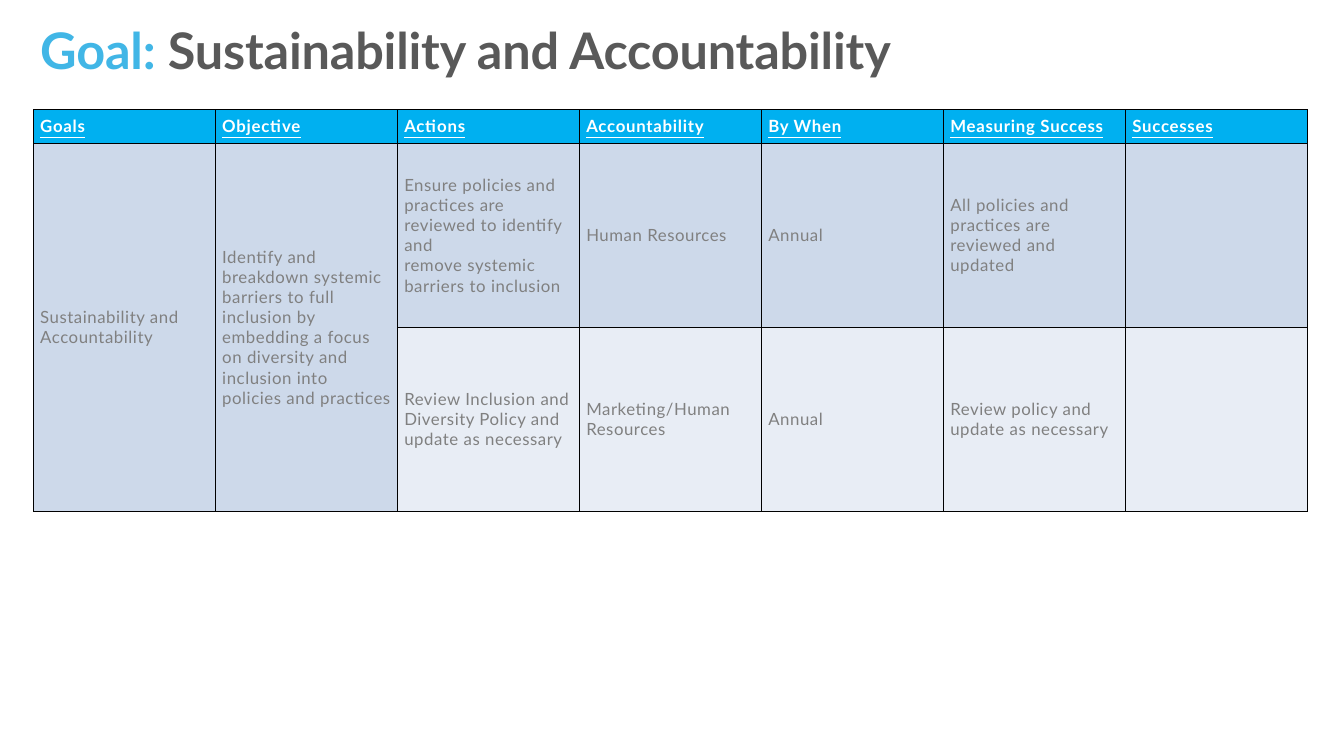
from pptx import Presentation
from pptx.dml.color import RGBColor
from pptx.enum.text import MSO_ANCHOR, MSO_AUTO_SIZE, PP_ALIGN
from pptx.oxml.ns import qn
from pptx.util import Cm, Pt
from lxml import etree

TOP, MIDDLE = MSO_ANCHOR.TOP, MSO_ANCHOR.MIDDLE
NO_AUTOFIT = MSO_AUTO_SIZE.NONE
LEFT = PP_ALIGN.LEFT
TITLE_ONLY = 5
FONT = "Lato"
COLORS = {
    "accent": "41B6E6", "title": "595959", "header": "00B0F0",
    "header_text": "FFFFFF", "body_text": "808080",
    "band_dark": "CDD9EA", "band_light": "E8EDF5", "border": "000000",
}
HEADERS = ["Goals", "Objective", "Actions", "Accountability", "By When",
           "Measuring Success", "Successes"]
ROWS = [
    ["Sustainability and Accountability",
     "Identify and breakdown systemic barriers to full inclusion by embedding "
     "a focus on diversity and inclusion into policies and practices",
     "Ensure policies and practices are reviewed to identify and\n"
     "remove systemic barriers to inclusion",
     "Human Resources", "Annual",
     "All policies and practices are reviewed and updated", ""],
    ["", "", "Review Inclusion and Diversity Policy and update as necessary",
     "Marketing/Human Resources", "Annual",
     "Review policy and update as necessary", ""],
]
MERGED_COLUMNS = 2
ROW_HEIGHTS = [1.27, 6.96, 6.96]
COLUMN_WIDTH = 6.88


def color(name):
    """Return the named palette colour."""
    return RGBColor.from_string(COLORS[name])


def format_run(r, size, color_name, spacing, bold=False, underline=False):
    """Apply font, colour and letter spacing in hundredths of a point."""
    r.font.name = FONT
    r.font.size = Pt(size)
    r.font.bold = bold
    r.font.underline = underline
    r.font.color.rgb = color(color_name)
    r._r.get_or_add_rPr().set("spc", str(spacing))


def set_borders(cell):
    """Draw a thin line on all four sides of a cell."""
    tcPr = cell._tc.get_or_add_tcPr()
    for side in ("lnL", "lnR", "lnT", "lnB"):
        ln = etree.SubElement(tcPr, qn("a:" + side), w=str(Pt(1)))
        fill = etree.SubElement(ln, qn("a:solidFill"))
        etree.SubElement(fill, qn("a:srgbClr"), val=COLORS["border"])


def fill_cell(cell, text, fill_name, **run_format):
    """Set the text, borders and fill of a table cell."""
    set_borders(cell)
    cell.fill.solid()
    cell.fill.fore_color.rgb = color(fill_name)
    cell.vertical_anchor = MIDDLE
    cell.margin_left = cell.margin_right = Cm(0.25)
    cell.margin_top = cell.margin_bottom = Cm(0.25)
    cell.text_frame.text = text
    for p in cell.text_frame.paragraphs:
        p.line_spacing = Pt(21.6)
        for r in p.runs:
            format_run(r, 18, **run_format)


def add_title(slide):
    """Place the two-coloured title."""
    sp = slide.shapes.title
    sp.left, sp.top, sp.width, sp.height = Cm(1.52), Cm(0.71), Cm(42.9), Cm(2.79)
    tf = sp.text_frame
    tf.auto_size = NO_AUTOFIT
    tf.word_wrap = True
    tf.vertical_anchor = TOP
    tf.margin_left = tf.margin_right = tf.margin_top = tf.margin_bottom = 0
    p = tf.paragraphs[0]
    p.alignment = LEFT
    p.line_spacing = Pt(64.8)
    for text, name in (("Goal: ", "accent"),
                       ("Sustainability and Accountability", "title")):
        r = p.add_run()
        r.text = text
        format_run(r, 54, name, -20, bold=True)


def add_goal_table(slide):
    """Add the action table with its merged goal and objective cells."""
    columns = len(HEADERS)
    table = slide.shapes.add_table(
        len(ROW_HEIGHTS), columns, Cm(1.27), Cm(4.14),
        Cm(COLUMN_WIDTH * columns), Cm(sum(ROW_HEIGHTS))).table
    for column in table.columns:
        column.width = Cm(COLUMN_WIDTH)
    for row, height in zip(table.rows, ROW_HEIGHTS):
        row.height = Cm(height)
    for col, text in enumerate(HEADERS):
        fill_cell(table.cell(0, col), text, "header", color_name="header_text",
                  spacing=80, bold=True, underline=True)
    bands = ("band_dark", "band_light")
    for row, (texts, band) in enumerate(zip(ROWS, bands), start=1):
        for col, text in enumerate(texts):
            fill_cell(table.cell(row, col), text, band,
                      color_name="body_text", spacing=60)
    for col in range(MERGED_COLUMNS):
        table.cell(1, col).merge(table.cell(2, col))


def main():
    """Build and save the slide."""
    prs = Presentation()
    prs.slide_width, prs.slide_height = Cm(50.8), Cm(28.58)
    slide = prs.slides.add_slide(prs.slide_layouts[TITLE_ONLY])
    add_title(slide)
    add_goal_table(slide)
    prs.save("out.pptx")


if __name__ == "__main__":
    main()
